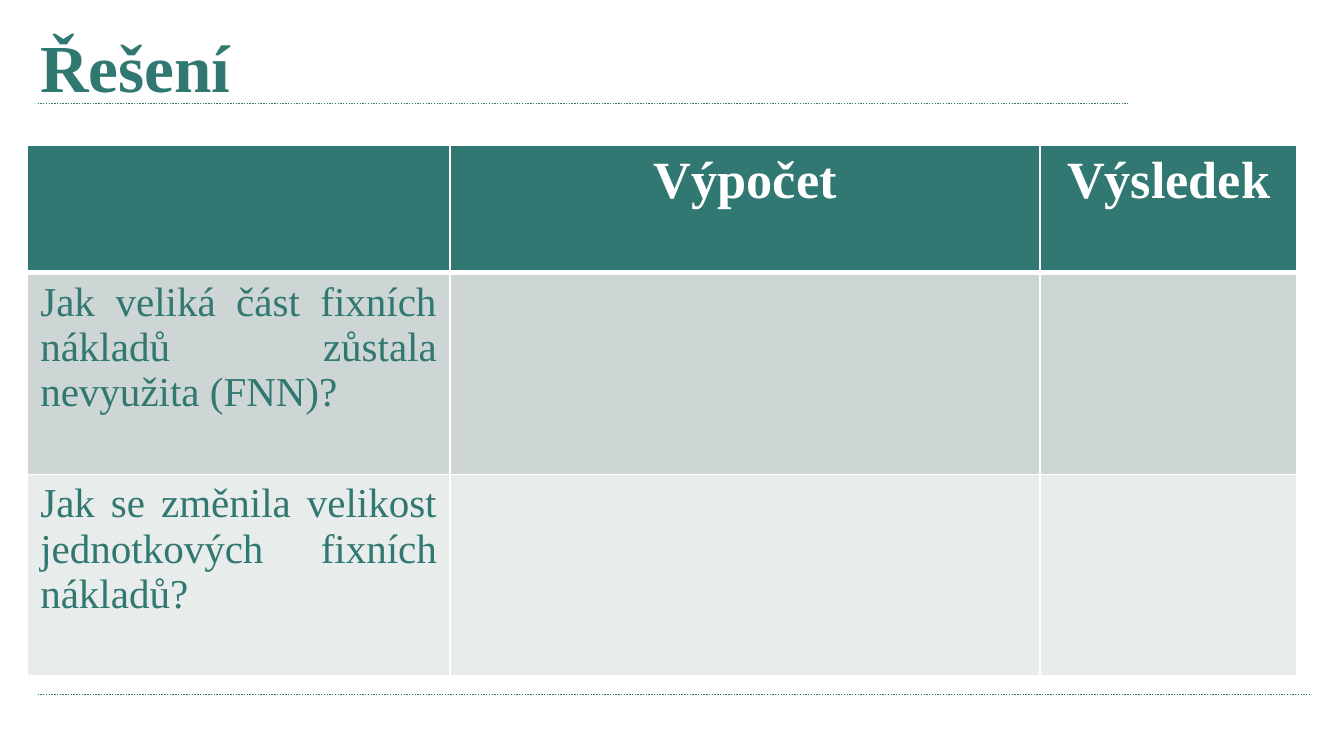
from lxml.etree import SubElement
from pptx import Presentation
from pptx.dml.color import RGBColor
from pptx.enum.dml import MSO_LINE
from pptx.enum.shapes import MSO_CONNECTOR
from pptx.enum.text import MSO_ANCHOR, PP_ALIGN
from pptx.oxml.ns import qn
from pptx.util import Inches, Pt

FONT = "Times New Roman"
TEAL, WHITE = "307871", "FFFFFF"
ROW_FILLS = [TEAL, "CDD6D5", "E8ECEB"]
COL_WIDTHS = [3.15, 4.39, 1.91]
ROW_HEIGHTS = [0.95, 1.5, 1.5]
ROWS = [
    ["", "Výpočet", "Výsledek"],
    ["Jak veliká část fixních nákladů zůstala nevyužita (FNN)?", "", ""],
    ["Jak se změnila velikost jednotkových fixních nákladů?", "", ""],
]


def rgb(value):
    return RGBColor.from_string(value)


def style_paragraph(p, size, color, bold, align):
    p.alignment = align
    p.font.name = FONT
    p.font.size = Pt(size)
    p.font.bold = bold
    p.font.color.rgb = rgb(color)


def add_title(slide, text):
    sp = slide.shapes.title
    sp.left, sp.top = Inches(0.2), Inches(0.14)
    sp.width, sp.height = Inches(8.82), Inches(0.79)
    tf = sp.text_frame
    tf.text = text
    tf.vertical_anchor = MSO_ANCHOR.TOP
    style_paragraph(tf.paragraphs[0], 36, TEAL, True, PP_ALIGN.LEFT)


def add_dotted_rule(slide, right, y):
    line = slide.shapes.add_connector(
        MSO_CONNECTOR.STRAIGHT, Inches(0.28), Inches(y), Inches(right), Inches(y))
    line.line.color.rgb = rgb(TEAL)
    line.line.width = Pt(0.75)
    line.line.dash_style = MSO_LINE.ROUND_DOT
    SubElement(line._element.spPr, qn("a:effectLst"))


def set_borders(cell, bottom, top):
    """Draw white cell borders; top and bottom widths are in points."""
    tcPr = cell._tc.get_or_add_tcPr()
    widths = {"a:lnL": 1, "a:lnR": 1, "a:lnT": top, "a:lnB": bottom}
    for tag, width in widths.items():
        ln = SubElement(tcPr, qn(tag), w=str(Pt(width)))
        fill = SubElement(ln, qn("a:solidFill"))
        SubElement(fill, qn("a:srgbClr"), val=WHITE)


def add_table(slide):
    frame = slide.shapes.add_table(
        len(ROWS), len(COL_WIDTHS), Inches(0.2), Inches(1.08),
        Inches(sum(COL_WIDTHS)), Inches(sum(ROW_HEIGHTS)))
    table = frame.table
    for column, width in zip(table.columns, COL_WIDTHS):
        column.width = Inches(width)
    for i, (row, height) in enumerate(zip(table.rows, ROW_HEIGHTS)):
        row.height = Inches(height)
        for cell, text in zip(row.cells, ROWS[i]):
            set_borders(cell, bottom=3 if i == 0 else 1, top=3 if i == 1 else 1)
            cell.fill.solid()
            cell.fill.fore_color.rgb = rgb(ROW_FILLS[i])
            if not text:
                continue
            cell.text = text
            p = cell.text_frame.paragraphs[0]
            if i == 0:
                style_paragraph(p, 28, WHITE, True, PP_ALIGN.CENTER)
            else:
                style_paragraph(p, 22, TEAL, False, PP_ALIGN.JUSTIFY)


def main():
    prs = Presentation()
    prs.slide_width = Inches(10)
    prs.slide_height = prs.slide_width * 9 // 16
    slide = prs.slides.add_slide(prs.slide_layouts[5])
    add_dotted_rule(slide, 8.39, 0.77)
    add_dotted_rule(slide, 9.75, 5.17)
    add_title(slide, "Řešení")
    add_table(slide)
    prs.save("out.pptx")


if __name__ == "__main__":
    main()
